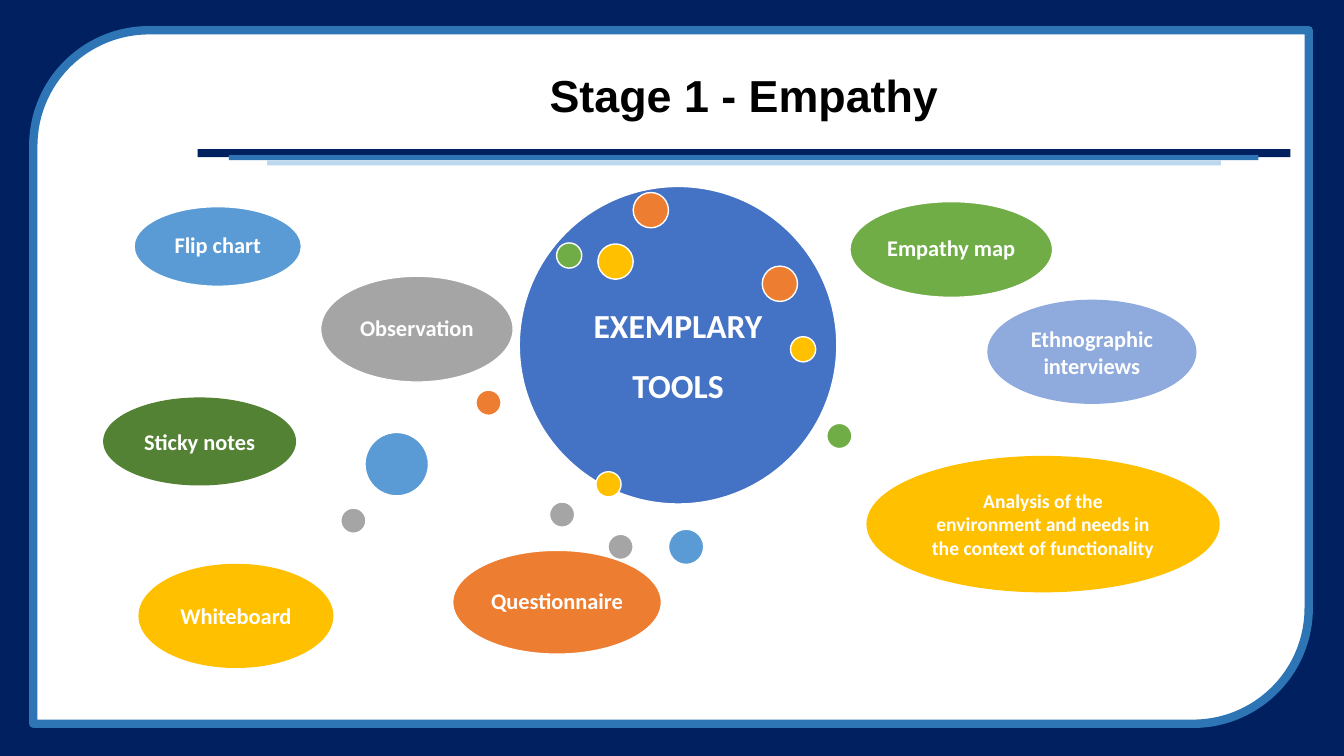
import pptx
import pptx.util
import pptx.dml.color
import pptx.enum.shapes
import pptx.enum.text

Inches = pptx.util.Inches
Pt = pptx.util.Pt
RGBColor = pptx.dml.color.RGBColor
Preset = pptx.enum.shapes.MSO_SHAPE

NAVY = RGBColor(0x00, 0x20, 0x60)
FRAME_BLUE = RGBColor(0x2E, 0x75, 0xB6)
PALE_BLUE = RGBColor(0xBD, 0xD7, 0xEE)
ROYAL = RGBColor(0x44, 0x72, 0xC4)
SKY = RGBColor(0x5B, 0x9B, 0xD5)
LAVENDER = RGBColor(0x8F, 0xAA, 0xDC)
ORANGE = RGBColor(0xED, 0x7D, 0x31)
GRAY = RGBColor(0xA5, 0xA5, 0xA5)
GOLD = RGBColor(0xFF, 0xC0, 0x00)
GREEN = RGBColor(0x70, 0xAD, 0x47)
DARK_GREEN = RGBColor(0x54, 0x82, 0x35)
WHITE = RGBColor(0xFF, 0xFF, 0xFF)
BLACK = RGBColor(0x00, 0x00, 0x00)

TITLE = "Stage 1 - Empathy"
TITLE_BOX = (1.96, 0.49, 10.84, 0.97)
PAGE_BOX = (0, 0, 13.33, 7.5)
FRAME_BOX = (0.33, 0.3, 12.65, 6.88)

RULES = [
    ((1.96, 1.48, 10.84, 0.08), NAVY),
    ((2.27, 1.54, 10.21, 0.05), FRAME_BLUE),
    ((2.65, 1.59, 9.46, 0.05), PALE_BLUE),
]

HUB = ("EXEMPLARY TOOLS", (5.15, 1.85, 3.15, 3.15), ROYAL)

CLUSTER_TOOLS = [
    ("Observation", (3.18, 2.74, 1.91, 1.05), GRAY),
    ("Empathy map", (8.43, 2.0, 2.01, 0.95), GREEN),
    ("Flip chart", (1.33, 2.05, 1.66, 0.79), SKY),
    ("Questionnaire", (4.49, 5.46, 2.07, 1.03), ORANGE),
]

ADDED_TOOLS = [
    ("Ethnographic interviews", (9.8, 2.98, 2.06, 1.02), LAVENDER, 16),
    ("Sticky notes", (1.03, 3.95, 1.9, 0.86), DARK_GREEN, 16),
    ("Analysis of the environment and needs in the context of functionality",
     (8.6, 4.53, 3.49, 1.34), GOLD, 14),
    ("Whiteboard", (1.38, 5.6, 1.92, 1.02), GOLD, 16),
]

SMALL, MEDIUM, LARGE = 0.25, 0.35, 0.63
DOTS = [
    (6.28, 1.91, MEDIUM, ORANGE),
    (5.45, 4.98, SMALL, GRAY),
    (7.84, 3.34, SMALL, GOLD),
    (6.63, 5.25, MEDIUM, SKY),
    (5.52, 2.41, SMALL, GREEN),
    (4.72, 3.87, SMALL, ORANGE),
    (5.93, 2.42, MEDIUM, GOLD),
    (3.62, 4.29, LARGE, SKY),
    (7.56, 2.64, MEDIUM, ORANGE),
    (3.38, 5.04, SMALL, GRAY),
    (5.91, 4.68, SMALL, GOLD),
    (8.2, 4.2, SMALL, GREEN),
    (6.03, 5.3, SMALL, GRAY),
]


def add_preset(slide, preset, box, fill, line=None, line_width=1):
    shape = slide.shapes.add_shape(preset, *map(Inches, box))
    shape.shadow.inherit = False
    shape.fill.solid()
    shape.fill.fore_color.rgb = fill
    if line is None:
        shape.line.fill.background()
    else:
        shape.line.color.rgb = line
        shape.line.width = Pt(line_width)
    return shape


def write_text(shape, text, size, color, font_name, spacing):
    frame = shape.text_frame
    frame.text = text
    frame.word_wrap = True
    frame.vertical_anchor = pptx.enum.text.MSO_ANCHOR.MIDDLE
    paragraph = frame.paragraphs[0]
    paragraph.alignment = pptx.enum.text.PP_ALIGN.CENTER
    paragraph.line_spacing = spacing
    font = paragraph.runs[0].font
    font.name = font_name
    font.size = Pt(size)
    font.bold = True
    font.color.rgb = color


def add_bubble(slide, text, box, fill, line, size, spacing, inset=None):
    bubble = add_preset(slide, Preset.OVAL, box, fill, line)
    write_text(bubble, text, size, WHITE, "Calibri", spacing)
    if inset is not None:
        frame = bubble.text_frame
        frame.margin_left = frame.margin_right = Inches(inset)
        frame.margin_top = frame.margin_bottom = Inches(inset)


def add_title(slide):
    title = slide.shapes.title
    title.left, title.top, title.width, title.height = map(Inches, TITLE_BOX)
    write_text(title, TITLE, 32, BLACK, "Arial", 0.9)
    title.element.getparent().append(title.element)


def main():
    presentation = pptx.Presentation()
    presentation.slide_width = Inches(13.33)
    presentation.slide_height = Inches(7.5)
    slide = presentation.slides.add_slide(presentation.slide_layouts[5])

    add_preset(slide, Preset.RECTANGLE, PAGE_BOX, NAVY)
    frame = add_preset(slide, Preset.ROUND_2_DIAG_RECTANGLE, FRAME_BOX, WHITE, FRAME_BLUE, 6)
    frame.rotation = 180
    for box, color in RULES:
        add_preset(slide, Preset.RECTANGLE, box, color)
    add_title(slide)

    hub_text, hub_box, hub_color = HUB
    add_bubble(slide, hub_text, hub_box, hub_color, WHITE, 24, 1.5, 0.1)
    for text, box, color in CLUSTER_TOOLS:
        add_bubble(slide, text, box, color, WHITE, 16, 0.9, 0.07)
    for left, top, diameter, color in DOTS:
        add_preset(slide, Preset.OVAL, (left, top, diameter, diameter), color, WHITE)
    for text, box, color, size in ADDED_TOOLS:
        add_bubble(slide, text, box, color, color, size, 1.0)

    presentation.save("out.pptx")


if __name__ == "__main__":
    main()
